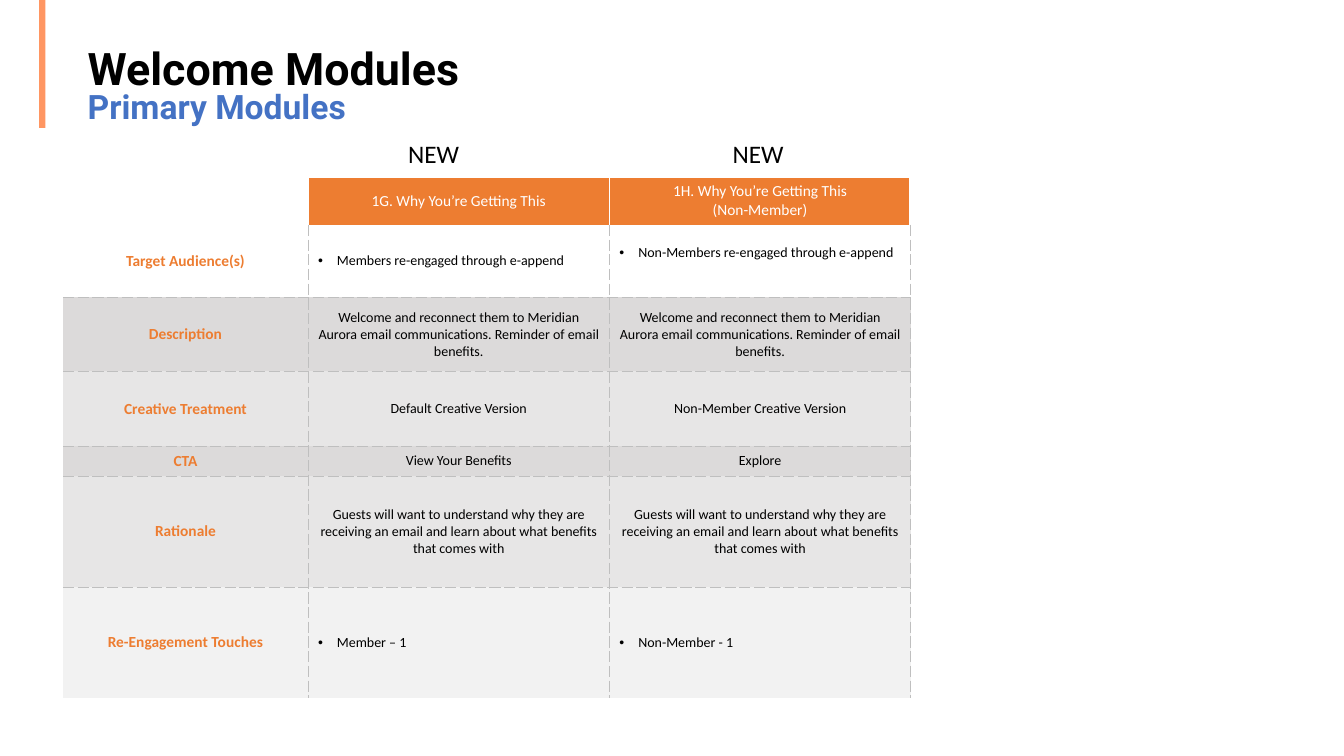
from lxml import etree
from pptx import Presentation
from pptx.dml.color import RGBColor
from pptx.enum.shapes import MSO_SHAPE
from pptx.enum.text import MSO_ANCHOR, PP_ALIGN
from pptx.oxml.ns import qn
from pptx.util import Pt

RECTANGLE = MSO_SHAPE.RECTANGLE
MIDDLE, BOTTOM = MSO_ANCHOR.MIDDLE, MSO_ANCHOR.BOTTOM
LEFT, CENTER = PP_ALIGN.LEFT, PP_ALIGN.CENTER

BLACK, WHITE, ORANGE, GREY = "000000", "FFFFFF", "ED7D31", "BFBFBF"
TITLE = {"name": "Roboto", "size": Pt(32), "bold": True}
SUBTITLE = {"name": "Roboto", "size": Pt(24), "bold": True}
NEW_TAG = {"name": "Calibri", "size": Pt(18)}
HEADING = {"name": "Calibri", "size": Pt(11), "bold": False}
LABEL = {"name": "Calibri", "size": Pt(11), "bold": True}
BODY = {"name": "Calibri", "size": Pt(10), "bold": False}

WELCOME = ("Welcome and reconnect them to Meridian Aurora email "
           "communications. Reminder of email benefits.")
REASON = ("Guests will want to understand why they are receiving an email "
          "and learn about what benefits that comes with")

# Row height, fill, bulleted, texts
ROWS = [
    (34.2, ORANGE, False, ["", "1G. Why You’re Getting This",
                           "1H. Why You’re Getting This\n(Non-Member)"]),
    (51.8, WHITE, True, ["Target Audience(s)", "Members re-engaged through e-append",
                         "Non-Members re-engaged through e-append"]),
    (53, "DCDADA", False, ["Description", WELCOME, WELCOME]),
    (53.5, "E7E6E6", False, ["Creative Treatment", "Default Creative Version",
                             "Non-Member Creative Version"]),
    (21.2, "DCDADA", False, ["CTA", "View Your Benefits", "Explore"]),
    (79.2, "E7E6E6", False, ["Rationale", REASON, REASON]),
    (79.2, "F2F2F2", True, ["Re-Engagement Touches", "Member – 1", "Non-Member - 1"]),
]
COLUMN_WIDTHS = [175, 215.3, 215.3]


def paint(target, color, font_format=None):
    """Colour a fill, or the fill of a font together with its format values."""
    fill = target
    if font_format:
        for attribute, value in font_format.items():
            setattr(target, attribute, value)
        fill = target.fill
    fill.solid()
    fill.fore_color.rgb = RGBColor.from_string(color)


def add_border(cell, edge, color, width, dash):
    """Draw one cell edge; a colour of None leaves it empty."""
    line = etree.SubElement(cell._tc.get_or_add_tcPr(), qn(f"a:ln{edge}"), w=str(Pt(width)))
    if color is None:
        etree.SubElement(line, qn("a:noFill"))
        return
    solid = etree.SubElement(line, qn("a:solidFill"))
    etree.SubElement(solid, qn("a:srgbClr"), val=color)
    etree.SubElement(line, qn("a:prstDash"), val=dash)


deck = Presentation()
deck.slide_width, deck.slide_height = Pt(960), Pt(540)
slide = deck.slides.add_slide(deck.slide_layouts[6])

accent = slide.shapes.add_shape(RECTANGLE, Pt(28), Pt(0), Pt(4.4), Pt(91.4))
accent.shadow.inherit = False
accent.line.fill.background()
paint(accent.fill, "FF9662")

title = slide.shapes.add_textbox(Pt(55.5), Pt(44), Pt(854), Pt(49.7)).text_frame
title.word_wrap = True
title.vertical_anchor = BOTTOM
heading = title.paragraphs[0]
heading.line_spacing = 0.8
main_run = heading.add_run()
main_run.text = "Welcome Modules"
paint(main_run.font, BLACK, TITLE)
heading.add_line_break()
sub_run = heading.add_run()
sub_run.text = "Primary Modules"
paint(sub_run.font, "4472C4", SUBTITLE)

table = slide.shapes.add_table(
    len(ROWS), len(COLUMN_WIDTHS), Pt(45), Pt(126.4),
    Pt(sum(COLUMN_WIDTHS)), Pt(sum(row[0] for row in ROWS))).table
table.first_row = table.horz_banding = False
for column, width in zip(table.columns, COLUMN_WIDTHS):
    column.width = Pt(width)

last_row, last_column = len(ROWS) - 1, len(COLUMN_WIDTHS) - 1
no_line, dashed = (None, 0, None), (GREY, 0.5, "sysDash")
white_line, thick_white = (WHITE, 1, "solid"), (WHITE, 3, "solid")

for r, (height, row_color, bulleted, texts) in enumerate(ROWS):
    table.rows[r].height = Pt(height)
    for c, text in enumerate(texts):
        cell = table.cell(r, c)
        if r == 0:
            borders = {"L": white_line, "R": thick_white if c == last_column else white_line,
                       "T": white_line, "B": no_line}
            text_color, text_format = WHITE, HEADING
        else:
            borders = {"L": dashed if c else no_line, "R": dashed,
                       "T": dashed if r > 1 else no_line,
                       "B": dashed if r < last_row else no_line}
            text_color, text_format = (BLACK, BODY) if c else (ORANGE, LABEL)
        for edge, border in borders.items():
            add_border(cell, edge, *border)
        paint(cell.fill, row_color if r or c else WHITE)
        cell.vertical_anchor = MIDDLE
        if not text:
            continue
        cell.text = text
        for paragraph in cell.text_frame.paragraphs:
            paragraph.alignment = CENTER
            if bulleted and c:
                paragraph.alignment = LEFT
                properties = paragraph._p.get_or_add_pPr()
                properties.set("marL", str(Pt(13.5)))
                properties.set("indent", str(-Pt(13.5)))
                etree.SubElement(properties, qn("a:buFont"), typeface="Arial")
                etree.SubElement(properties, qn("a:buChar"), char="•")
            paint(paragraph.runs[0].font, text_color, text_format)

# The non-member audience sits half a line above the middle of its row
table.cell(1, 2).margin_bottom = Pt(15.8)

for left in (284.4, 516.2):
    tag = slide.shapes.add_textbox(Pt(left), Pt(95), Pt(80), Pt(29)).text_frame
    tag.word_wrap = True
    tag.text = "NEW"
    paint(tag.paragraphs[0].runs[0].font, BLACK, NEW_TAG)

deck.save("out.pptx")
